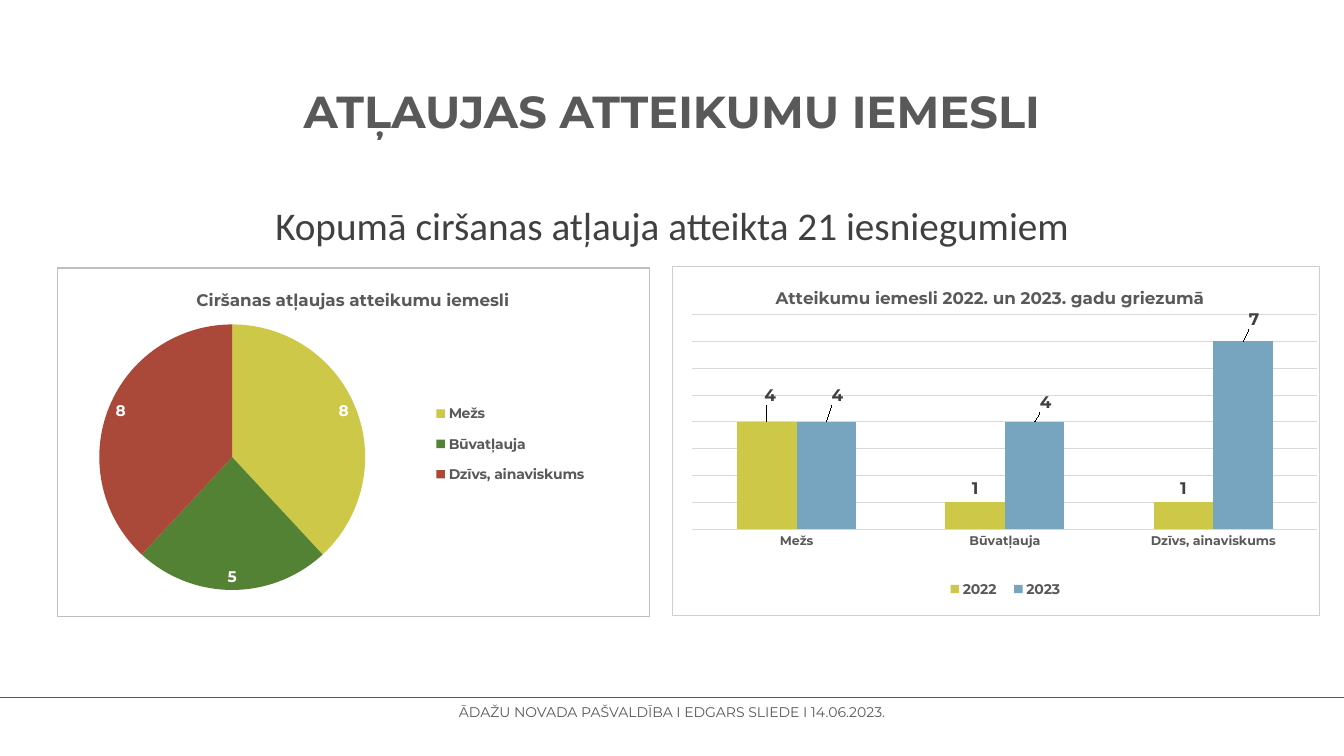
from lxml import etree
from pptx import Presentation
from pptx import util as u
from pptx.chart.data import CategoryChartData
from pptx.dml.color import RGBColor
from pptx.enum import chart as ch, shapes, text
from pptx.oxml import parse_xml
from pptx.oxml.ns import nsdecls, qn

GREY = RGBColor(0x59, 0x59, 0x59)
DARK = RGBColor(0x40, 0x40, 0x40)
WHITE = RGBColor(0xFF, 0xFF, 0xFF)
GRID = RGBColor(0xD9, 0xD9, 0xD9)
PIE_BORDER = RGBColor(0xBF, 0xBF, 0xBF)
COLUMN_BORDER = RGBColor(0xD0, 0xCE, 0xCE)
LIME = RGBColor(0xCD, 0xC8, 0x47)
GREEN = RGBColor(0x54, 0x82, 0x35)
RED = RGBColor(0xAA, 0x48, 0x39)
BLUE = RGBColor(0x77, 0xA4, 0xBE)

REASONS = ["Mežs", "Būvatļauja", "Dzīvs, ainaviskums"]


def style(font, size, color=GREY, bold=True, name="Montserrat"):
    font.size, font.bold, font.name = u.Pt(size), bold, name
    font.color.rgb = color


def write(frame, words, spacing=None, before=0, anchor=None, **font):
    frame.word_wrap = True
    frame.text = words
    if anchor is not None:
        frame.vertical_anchor = anchor
    paragraph = frame.paragraphs[0]
    paragraph.alignment = text.PP_ALIGN.CENTER
    paragraph.space_before = u.Pt(before)
    if spacing:
        paragraph.line_spacing = spacing
    style(paragraph.runs[0].font, **font)


def place(part, after, inner=False, edges=True, **fractions):
    """Give a chart part a manual layout, right after the named child."""
    for old in part.findall(qn("c:layout")):
        part.remove(old)
    layout = parse_xml(f'<c:layout {nsdecls("c")}><c:manualLayout/></c:layout>')
    settings = {"layoutTarget": "inner"} if inner else {}
    if edges:
        settings.update(xMode="edge", yMode="edge")
    settings.update(fractions)
    for tag, value in settings.items():
        etree.SubElement(layout[0], qn("c:" + tag)).set("val", str(value))
    index = part.index(part.find(qn(after))) + 1 if after else 0
    part.insert(index, layout)


def add_framed_chart(slide, box, kind, series, heading, heading_x, plot, legend_side,
                     legend, border, border_width):
    data = CategoryChartData()
    data.categories = REASONS
    for name, values in series.items():
        data.add_series(name, values)
    chart = slide.shapes.add_chart(kind, *map(u.Cm, box), data).chart
    style(chart.font, 10, RGBColor(0, 0, 0), bold=False, name="Calibri")

    # Frame around the chart
    root = chart._chartSpace
    root.find(qn("c:txPr")).addprevious(parse_xml(
        f'<c:spPr {nsdecls("c", "a")}><a:solidFill><a:srgbClr val="{WHITE}"/></a:solidFill>'
        f'<a:ln w="{u.Pt(border_width)}"><a:solidFill><a:srgbClr val="{border}"/>'
        '</a:solidFill></a:ln></c:spPr>'))

    # Heading, legend and plot area
    write(chart.chart_title.text_frame, heading, size=12)
    place(chart.chart_title._element, "c:tx", x=heading_x, y=0.05)
    chart.has_legend = True
    chart.legend.position = legend_side
    chart.legend.include_in_layout = False
    style(chart.legend.font, 10)
    place(chart.legend._element, "c:legendPos", **legend)
    place(root.find(".//" + qn("c:plotArea")), None, inner=True, **plot)
    return chart


def add_reason_pie(slide, box):
    chart = add_framed_chart(
        slide, box, ch.XL_CHART_TYPE.PIE, {"Series 1": (8, 5, 8)},
        "Ciršanas atļaujas atteikumu iemesli", 0.23,
        dict(x=0, y=0.162, w=0.591, h=0.762), ch.XL_LEGEND_POSITION.RIGHT,
        dict(x=0.63, y=0.355, w=0.27, h=0.3), PIE_BORDER, 0.75)
    reasons = chart.plots[0].series[0]
    for index, color in enumerate((LIME, GREEN, RED)):
        fill = reasons.points[index].format.fill
        fill.solid()
        fill.fore_color.rgb = color
    labels = reasons.data_labels
    labels.show_value = True
    labels.position = ch.XL_LABEL_POSITION.BEST_FIT
    style(labels.font, 11, WHITE)


def add_year_columns(slide, box):
    chart = add_framed_chart(
        slide, box, ch.XL_CHART_TYPE.COLUMN_CLUSTERED, {"2022": (4, 1, 1), "2023": (4, 4, 7)},
        "Atteikumu iemesli 2022. un 2023. gadu griezumā", 0.155,
        dict(x=0.031, y=0.139, w=0.967, h=0.615), ch.XL_LEGEND_POSITION.BOTTOM,
        dict(x=0.41, y=0.885, w=0.21, h=0.08), COLUMN_BORDER, 0.25)
    plot = chart.plots[0]
    plot.gap_width, plot.overlap, plot.vary_by_categories = 150, 0, False

    # Axes
    reasons_axis, count_axis = chart.category_axis, chart.value_axis
    reasons_axis.major_tick_mark = ch.XL_TICK_MARK.NONE
    reasons_axis.format.line.fill.background()
    style(reasons_axis.tick_labels.font, 9)
    count_axis.minimum_scale, count_axis.maximum_scale, count_axis.major_unit = 0, 8, 1
    count_axis.visible = False
    grid = count_axis.major_gridlines.format.line
    grid.width = u.Pt(0.75)
    grid.color.rgb = GRID

    # Columns, with some value labels nudged away from their bars
    nudges = ({0: (0.005, -0.035)},
              {0: (0.017, -0.035), 1: (0.017, -0.015), 2: (0.017, -0.023)})
    for year, color, shifts in zip(plot.series, (LIME, BLUE), nudges):
        year.format.fill.solid()
        year.format.fill.fore_color.rgb = color
        labels = year.data_labels
        labels.show_value = True
        labels.position = ch.XL_LABEL_POSITION.OUTSIDE_END
        style(labels.font, 12, DARK)
        for index, (dx, dy) in shifts.items():
            label = year.points[index].data_label
            style(label.font, 12, DARK)
            label.position = ch.XL_LABEL_POSITION.OUTSIDE_END
        for element, (dx, dy) in zip(year._element.iter(qn("c:dLbl")), shifts.values()):
            place(element, "c:idx", edges=False, x=dx, y=dy)


def add_heading(slide, box):
    left, top, width, height = box
    title = slide.shapes.title
    title.left, title.top, title.width, title.height = map(u.Cm, (left, top, width, 3.68))
    write(title.text_frame, "ATĻAUJAS ATTEIKUMU IEMESLI", size=32, spacing=0.9,
          anchor=text.MSO_ANCHOR.MIDDLE)
    summary = slide.shapes.add_textbox(*map(u.Cm, (left, top + 4.06, width, height - 4.06)))
    write(summary.text_frame, "Kopumā ciršanas atļauja atteikta 21 iesniegumiem", size=28,
          color=DARK, bold=False, name="Calibri", spacing=0.9, before=10)


def add_footer(slide, box):
    left, top, width, height = box
    rule = slide.shapes.add_connector(
        shapes.MSO_CONNECTOR.STRAIGHT, *map(u.Cm, (left, top, left + width, top)))
    rule.line.color.rgb = GREY
    rule.line.width = u.Pt(0.75)
    etree.SubElement(rule._element.spPr, qn("a:effectLst"))
    credit = slide.shapes.add_textbox(
        *map(u.Cm, (left + 0.17, top + 0.15, width - 0.34, height - 0.15)))
    frame = credit.text_frame
    frame.margin_left = frame.margin_right = frame.margin_top = frame.margin_bottom = 0
    write(frame, "ĀDAŽU NOVADA PAŠVALDĪBA I EDGARS SLIEDE I 14.06.2023.", size=10,
          bold=False, spacing=u.Pt(12))


def main():
    deck = Presentation()
    deck.slide_width, deck.slide_height = u.Cm(33.87), u.Cm(19.05)
    slide = deck.slides.add_slide(deck.slide_layouts[5])
    add_footer(slide, (0, 17.58, 33.87, 0.58))
    add_heading(slide, (2.33, 1.02, 29.21, 5.43))
    add_reason_pie(slide, (1.43, 6.74, 14.95, 8.81))
    add_year_columns(slide, (16.94, 6.7, 16.3, 8.81))
    deck.save("out.pptx")


if __name__ == "__main__":
    main()
